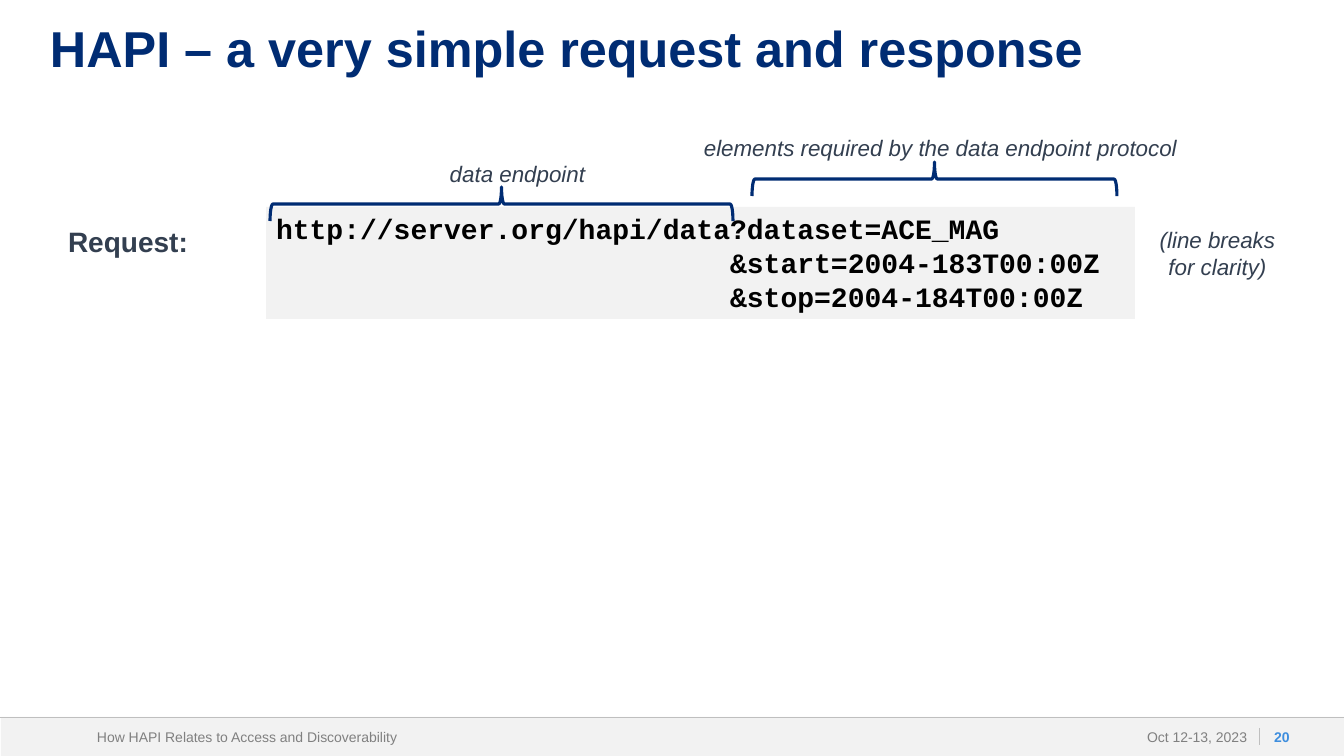
from dataclasses import dataclass
from typing import NamedTuple

from lxml.etree import SubElement
from pptx import Presentation
from pptx.dml.color import RGBColor
from pptx.enum.shapes import MSO_CONNECTOR as Connector, MSO_SHAPE as Preset
from pptx.enum.text import MSO_ANCHOR as Anchor, PP_ALIGN as Align
from pptx.oxml.ns import qn
from pptx.shapes.autoshape import Shape
from pptx.slide import Slide
from pptx.util import Emu, Pt

EMU_PER_PX = 914400 / 100.8


@dataclass(frozen=True)
class Theme:
    navy: str = "002C73"
    slate: str = "333F50"
    black: str = "000000"
    panel: str = "F2F2F2"
    rule: str = "BFBFBF"
    footer: str = "808080"
    accent: str = "3E8EDE"
    sans: str = "Arial"
    mono: str = "Courier New"
    title_size: int = 36
    body_size: int = 20
    note_size: int = 16
    footer_size: int = 10
    brace_width: float = 2.25
    rule_width: float = 0.5


THEME = Theme()


class Box(NamedTuple):
    left: int
    top: int
    width: int
    height: int


class Style(NamedTuple):
    size: int
    color: str
    font: str = THEME.sans
    bold: bool = False
    italic: bool = False
    align: Align = Align.LEFT
    anchor: Anchor = Anchor.TOP
    wrap: bool = True
    inset_x: int = 10
    inset_y: int = 5
    line_spacing: float = 1.0


class Label(NamedTuple):
    box: Box
    lines: tuple[str, ...]
    style: Style


TITLE = Style(THEME.title_size, THEME.navy, bold=True, inset_x=0, inset_y=0,
              line_spacing=0.9)
HEADING = Style(THEME.body_size, THEME.slate, bold=True, wrap=False)
NOTE = Style(THEME.note_size, THEME.slate, italic=True, align=Align.CENTER, wrap=False)
CODE = Style(THEME.body_size, THEME.black, THEME.mono, bold=True)
FOOTER = Style(THEME.footer_size, THEME.footer, anchor=Anchor.MIDDLE, inset_y=0)
DATE = FOOTER._replace(align=Align.RIGHT)
PAGE = FOOTER._replace(color=THEME.accent, bold=True, align=Align.CENTER, inset_x=0)

SLIDE_WIDTH, SLIDE_HEIGHT = 1344, 756
FOOTER_TOP, FOOTER_HEIGHT = 717, 39

ENDPOINT = "http://server.org/hapi/data"
INDENT = " " * len(ENDPOINT)
REQUEST = Label(
    Box(266, 207, 869, 112),
    (
        ENDPOINT + "?dataset=ACE_MAG",
        INDENT + "&start=2004-183T00:00Z",
        INDENT + "&stop=2004-184T00:00Z",
    ),
    CODE,
)

LABELS = (
    Label(Box(50, 24, 1243, 84), ("HAPI – a very simple request and response",), TITLE),
    Label(Box(58, 219, 141, 44), ("Request:",), HEADING),
    Label(Box(1149, 221, 137, 64), ("(line breaks", "for clarity)"), NOTE),
    Label(Box(439, 155, 157, 37), ("data endpoint",), NOTE),
    Label(Box(691, 129, 499, 37),
          ("elements required by the data endpoint protocol",), NOTE),
    Label(Box(87, FOOTER_TOP, 353, FOOTER_HEIGHT),
          ("How HAPI Relates to Access and Discoverability",), FOOTER),
    Label(Box(934, FOOTER_TOP, 323, FOOTER_HEIGHT), ("Oct 12-13, 2023",), DATE),
    Label(Box(1261, FOOTER_TOP, 42, FOOTER_HEIGHT), ("20",), PAGE),
)

BRACES = (Box(270, 187, 463, 34), Box(752, 162, 365, 34))
FOOTER_RULES = (
    (0, FOOTER_TOP, SLIDE_WIDTH, FOOTER_TOP),
    (1259, 728, 1259, 745),
)


def px(length: float) -> Emu:
    return Emu(round(length * EMU_PER_PX))


def rgb(color: str) -> RGBColor:
    return RGBColor.from_string(color)


def set_attributes(target: object, values: dict[str, object]) -> None:
    for name, value in values.items():
        setattr(target, name, value)


def write_text(shape: Shape, lines: tuple[str, ...], style: Style) -> None:
    frame = shape.text_frame
    set_attributes(frame, {
        "text": "\n".join(lines),
        "word_wrap": style.wrap,
        "vertical_anchor": style.anchor,
        "margin_left": px(style.inset_x),
        "margin_right": px(style.inset_x),
        "margin_top": px(style.inset_y),
        "margin_bottom": px(style.inset_y),
    })
    for paragraph in frame.paragraphs:
        set_attributes(paragraph, {
            "alignment": style.align, "line_spacing": style.line_spacing,
        })
        for run in paragraph.runs:
            set_attributes(run.font, {
                "name": style.font, "size": Pt(style.size),
                "bold": style.bold, "italic": style.italic,
            })
            run.font.color.rgb = rgb(style.color)


def add_label(slide: Slide, label: Label) -> None:
    textbox = slide.shapes.add_textbox(*map(px, label.box))
    write_text(textbox, label.lines, label.style)


def add_panel(slide: Slide, box: Box) -> Shape:
    panel = slide.shapes.add_shape(Preset.RECTANGLE, *map(px, box))
    panel.shadow.inherit = False
    panel.fill.solid()
    panel.fill.fore_color.rgb = rgb(THEME.panel)
    panel.line.fill.background()
    return panel


def add_brace(slide: Slide, box: Box) -> None:
    """Turn a right brace a quarter left so that it fills box and points up."""
    left = box.left + (box.width - box.height) / 2
    top = box.top + (box.height - box.width) / 2
    brace = slide.shapes.add_shape(
        Preset.RIGHT_BRACE, px(left), px(top), px(box.height), px(box.width))
    brace.rotation = 270
    brace.shadow.inherit = False
    brace.fill.background()
    brace.line.color.rgb = rgb(THEME.navy)
    brace.line.width = Pt(THEME.brace_width)


def add_rule(slide: Slide, ends: tuple[int, int, int, int]) -> None:
    rule = slide.shapes.add_connector(Connector.STRAIGHT, *map(px, ends))
    rule.line.color.rgb = rgb(THEME.rule)
    rule.line.width = Pt(THEME.rule_width)
    SubElement(rule._element.spPr, qn("a:effectLst"))


def main() -> None:
    deck = Presentation()
    set_attributes(deck, {
        "slide_width": px(SLIDE_WIDTH), "slide_height": px(SLIDE_HEIGHT),
    })
    slide = deck.slides.add_slide(deck.slide_layouts[6])

    add_panel(slide, Box(1, FOOTER_TOP, SLIDE_WIDTH - 1, FOOTER_HEIGHT))
    for ends in FOOTER_RULES:
        add_rule(slide, ends)
    write_text(add_panel(slide, REQUEST.box), REQUEST.lines, REQUEST.style)
    for label in LABELS:
        add_label(slide, label)
    for brace in BRACES:
        add_brace(slide, brace)

    deck.save("out.pptx")


if __name__ == "__main__":
    main()
